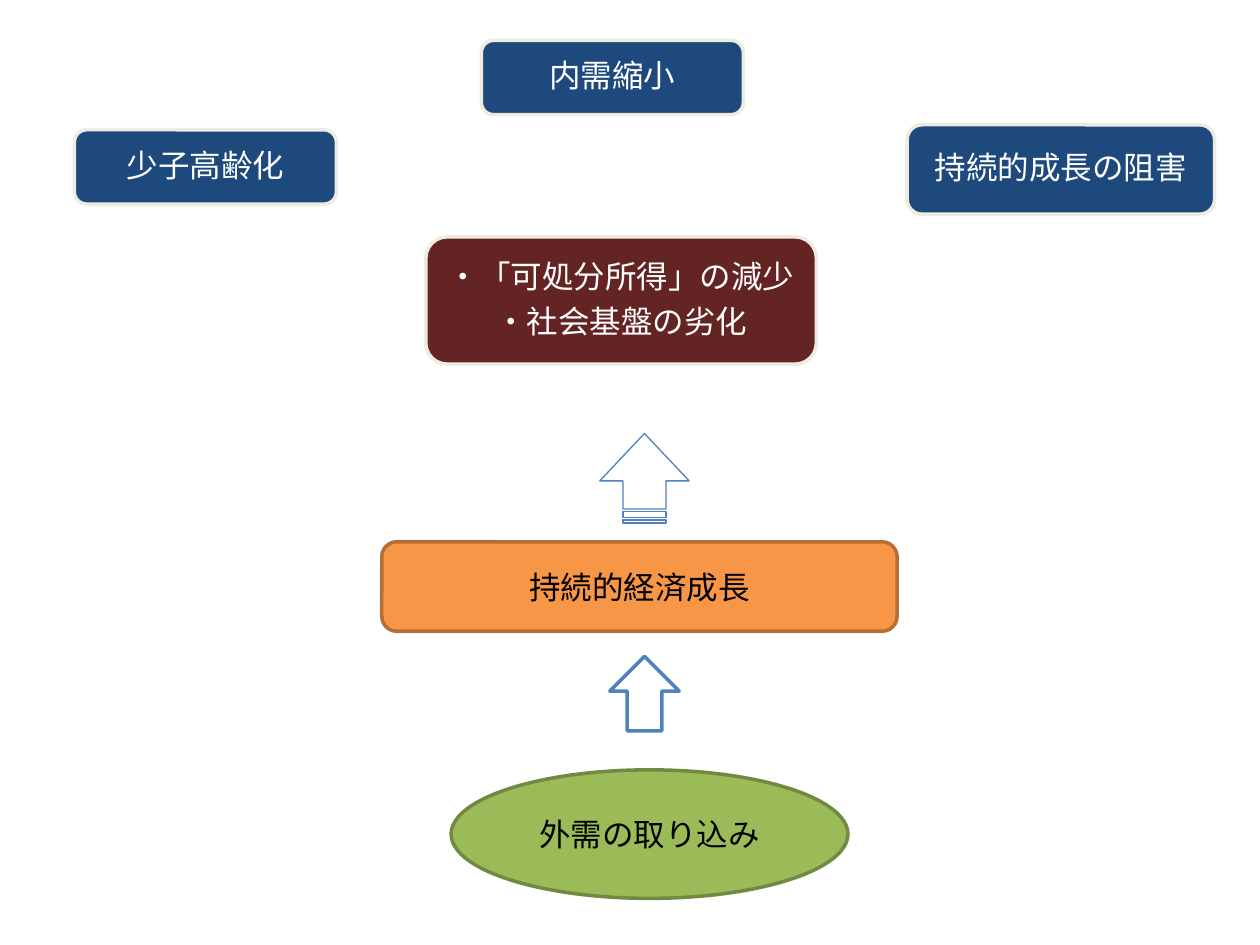
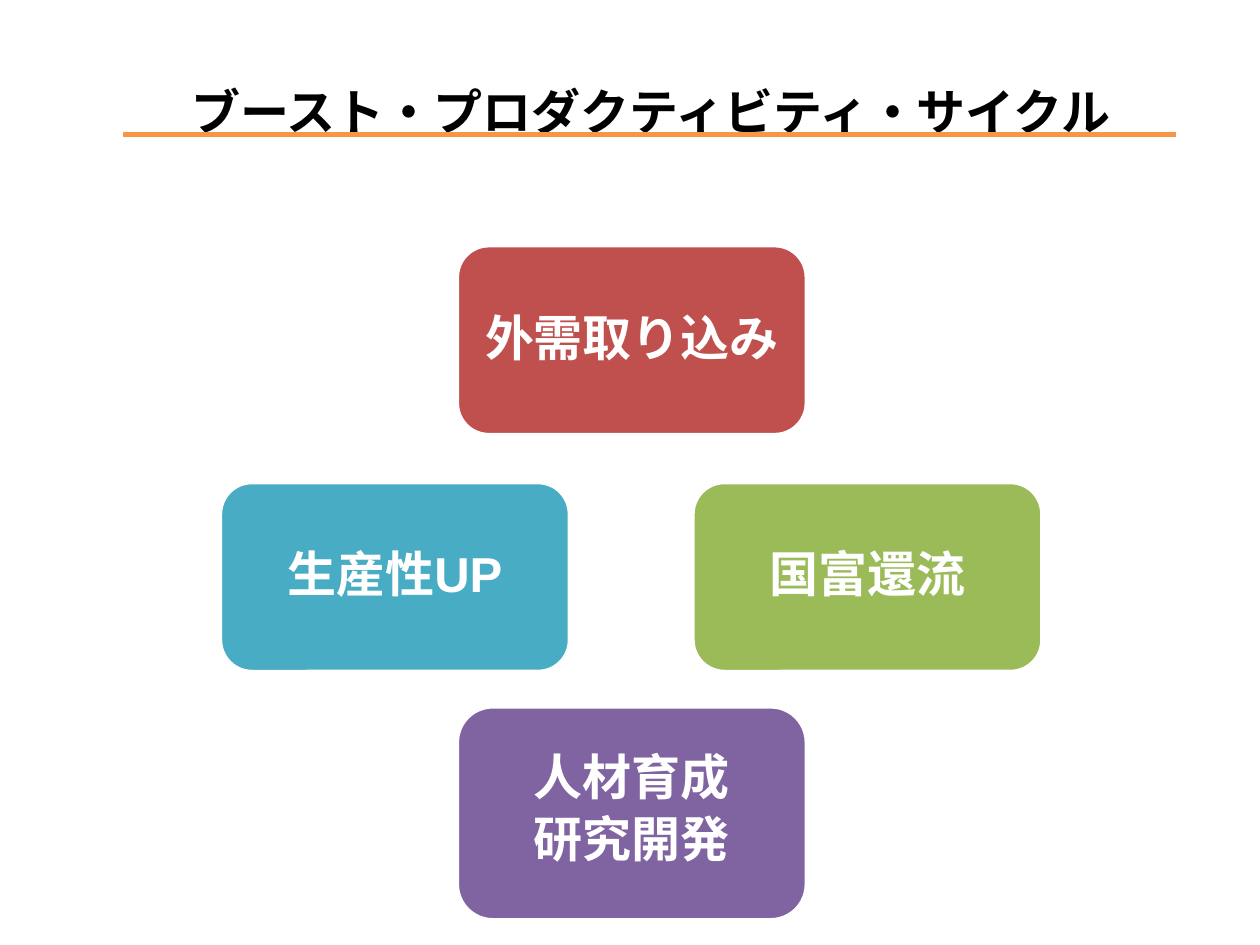
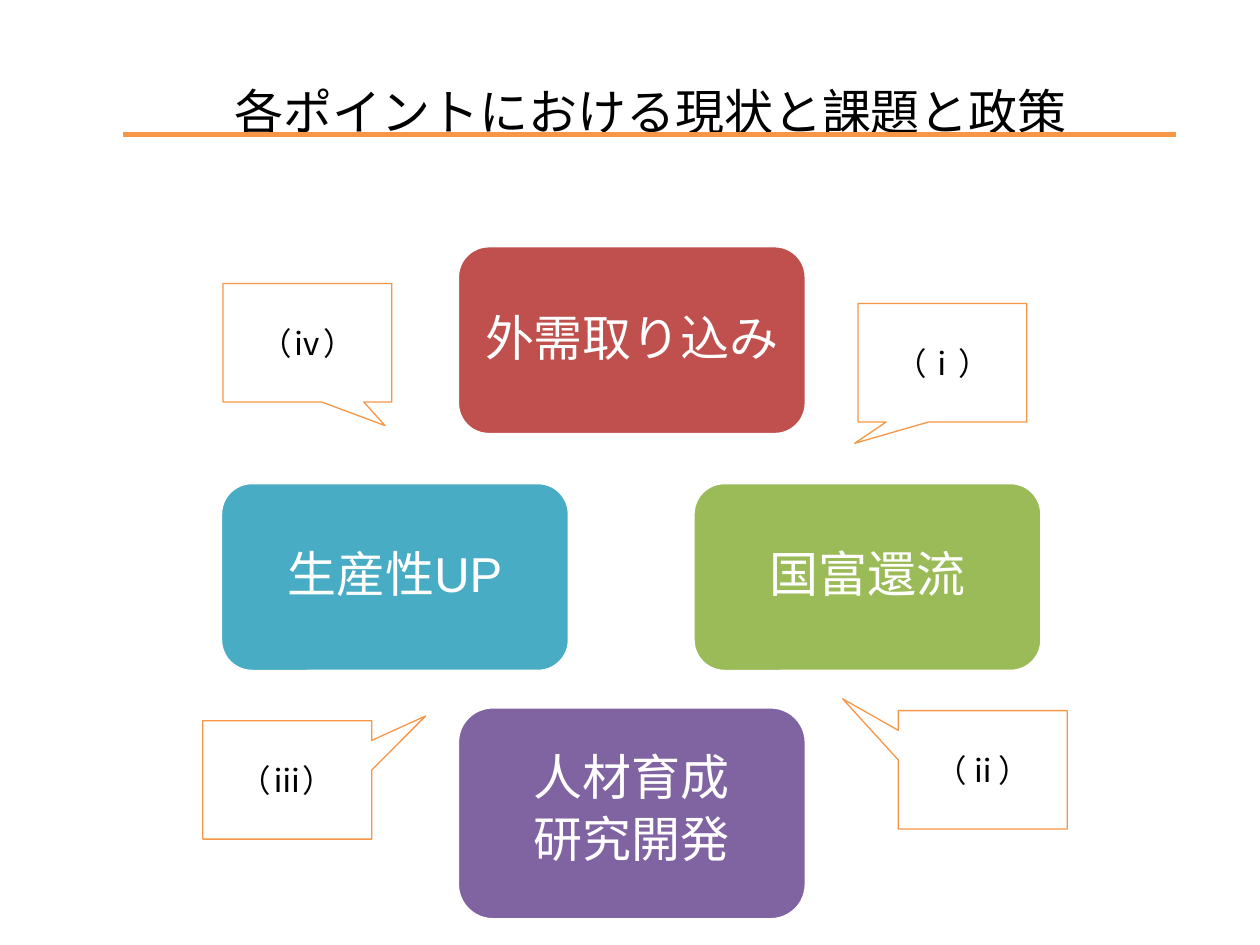
from pptx import Presentation
from pptx.dml.color import RGBColor
from pptx.enum.shapes import MSO_CONNECTOR as Link, MSO_SHAPE as Kind
from pptx.enum.text import MSO_ANCHOR as Anchor, MSO_AUTO_SIZE as Fit, PP_ALIGN as Align
from pptx.oxml.ns import qn
from pptx.util import Inches, Pt
from lxml import etree

COLORS = {
    "white": "FFFFFF", "black": "000000", "navy": "1D497D", "cream": "EEECE0",
    "maroon": "632423", "orange": "F79646", "rust": "B56E33", "green": "9BBB59",
    "moss": "718941", "blue": "4F81BD", "red": "BF504D", "purple": "8064A2",
    "teal": "49ACC5",
}


def rgb(name):
    return RGBColor.from_string(COLORS[name])


def write(shape, text, size=18, color="black", font="Arial", bold=False,
          inset=(0.1, 0.05), anchor=Anchor.MIDDLE, lead=None, gap=0):
    """Fill a shape with centred text, one paragraph per line."""
    frame = shape.text_frame
    frame.word_wrap = True
    frame.auto_size = Fit.NONE
    frame.vertical_anchor = anchor
    frame.margin_left = frame.margin_right = Inches(inset[0])
    frame.margin_top = frame.margin_bottom = Inches(inset[1])
    frame.text = text
    paras = frame.paragraphs
    for i, para in enumerate(paras):
        para.alignment = Align.CENTER
        para.line_spacing = lead
        para.space_before = Pt(gap if i else 0)
        para.space_after = Pt(gap if i == len(paras) - 1 else 0)
        face = para.runs[0].font
        face.name, face.size, face.bold = font, Pt(size), bold
        face.color.rgb = rgb(color)


def draw(slide, kind, box, fill, line, width=2, adjust=(), turn=0):
    shape = slide.shapes.add_shape(kind, *map(Inches, box))
    shape.shadow.inherit = False
    shape.fill.solid()
    shape.fill.fore_color.rgb = rgb(fill)
    shape.line.color.rgb = rgb(line)
    shape.line.width = Pt(width)
    for i, value in enumerate(adjust):
        shape.adjustments[i] = value
    shape.rotation = turn
    return shape


def add_cause(slide, text, box, fill="navy"):
    shape = draw(slide, Kind.ROUNDED_RECTANGLE, box, fill, "cream")
    write(shape, text, color="white", inset=(0.07, 0.07), lead=0.9, gap=6.3)


def add_title(slide, text, bold):
    title = slide.shapes.title
    title.left, title.top, title.width, title.height = map(Inches, (1.22, 0.6, 7.89, 0.57))
    write(title, text, size=28, bold=bold, anchor=Anchor.TOP)
    # Rule under the title
    rule = slide.shapes.add_connector(
        Link.STRAIGHT, *map(Inches, (0.98, 1.07, 9.33, 1.07)))
    rule.line.color.rgb = rgb("orange")
    rule.line.width = Pt(3)
    etree.SubElement(rule.element.spPr, qn("a:effectLst"))


def add_cycle(slide, bold):
    steps = [
        ("外需取り込み", 3.63, 1.95, 1.5, "red"),
        ("国富還流", 5.5, 3.83, 1.5, "green"),
        ("人材育成\n研究開発", 3.63, 5.61, 1.69, "purple"),
        ("生産性UP", 1.75, 3.83, 1.5, "teal"),
    ]
    for text, left, top, high, fill in steps:
        card = draw(slide, Kind.ROUNDED_RECTANGLE, (left, top, 2.77, high), fill, "white")
        write(card, text, size=28, color="white", bold=bold, inset=(0.12, 0.12),
              lead=0.75 if "\n" in text else 0.9, gap=9.8)


def add_note(slide, text, left, top, tip):
    note = draw(slide, Kind.RECTANGULAR_CALLOUT, (left, top, 1.34, 0.94),
                "white", "orange", width=0.75, adjust=tip)
    write(note, text, font="Calibri")


def add_page(deck, title, bold=False):
    slide = deck.slides.add_slide(deck.slide_layouts[5])
    add_cycle(slide, bold)
    add_title(slide, title, bold)
    return slide


def add_growth(deck):
    slide = deck.slides.add_slide(deck.slide_layouts[6])
    for mark in list(slide.placeholders):
        mark.element.getparent().remove(mark.element)

    # Path from outside demand up to growth
    draw(slide, Kind.STRIPED_RIGHT_ARROW, (4.76, 3.44, 0.71, 0.71), "white", "blue",
         width=0.75, adjust=(0.48, 0.53), turn=270)
    goal = draw(slide, Kind.ROUNDED_RECTANGLE, (3.03, 4.3, 4.09, 0.71), "orange", "rust")
    write(goal, "持続的経済成長")
    source = draw(slide, Kind.OVAL, (3.58, 6.11, 3.15, 1.02), "green", "moss")
    write(source, "外需の取り込み")
    draw(slide, Kind.RIGHT_ARROW, (4.82, 5.23, 0.59, 0.55), "white", "blue", turn=270)

    # Problems at home
    add_cause(slide, "内需縮小", (3.82, 0.32, 2.08, 0.59))
    add_cause(slide, "持続的成長の阻害", (7.2, 0.99, 2.44, 0.71))
    add_cause(slide, "・「可処分所得」の減少\n・社会基盤の劣化", (3.38, 1.88, 3.1, 1.01), "maroon")
    add_cause(slide, "少子高齢化", (0.59, 1.03, 2.08, 0.59))


def main():
    deck = Presentation()
    deck.slide_width, deck.slide_height = Inches(10), Inches(7.5)

    add_growth(deck)
    add_page(deck, "ブースト・プロダクティビティ・サイクル", bold=True)

    # Cycle with numbered points
    points = add_page(deck, "各ポイントにおける現状と課題と政策")
    add_note(points, "（ⅰ）", 6.81, 2.41, (-0.52, 0.68))
    add_note(points, "（ⅱ）", 7.13, 5.64, (-0.83, -0.6))
    add_note(points, "（ⅲ）", 1.61, 5.72, (0.82, -0.54))
    add_note(points, "（ⅳ）", 1.77, 2.25, (0.46, 0.7))

    deck.save("out.pptx")


if __name__ == "__main__":
    main()
